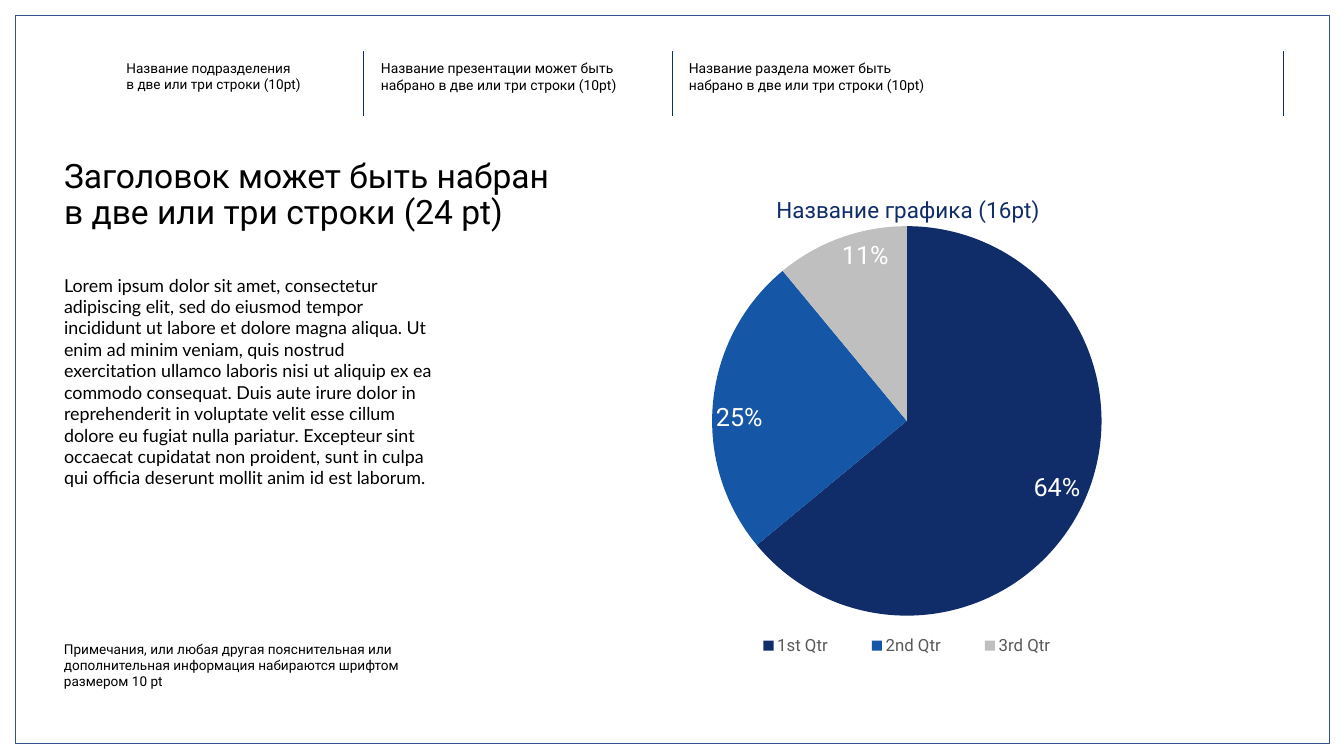
from lxml import etree
from pptx import Presentation
from pptx import util as u
from pptx.chart.data import CategoryChartData
from pptx.dml.color import RGBColor
from pptx.enum import chart as ch, shapes, text
from pptx.oxml.ns import qn

COLORS = {"navy": "102D69", "blue": "1656A6", "silver": "BFBFBF", "frame": "32538F",
          "white": "FFFFFF", "black": "000000", "gray": "595959"}
SLICES = [("1st Qtr", 64, "navy"), ("2nd Qtr", 25, "blue"), ("3rd Qtr", 11, "silver")]
HEADERS = [
    (2.41, 19.4, "Название подразделения\vв две или три строки (10pt)"),
    (7.46, 19.8, "Название презентации может быть набрано в две или три строки (10pt)"),
    (13.57, 19.8, "Название раздела может быть набрано в две или три строки (10pt)"),
]
BODY = ("Lorem ipsum dolor sit amet, consectetur adipiscing elit, sed do eiusmod tempor "
        "incididunt ut labore et dolore magna aliqua. Ut enim ad minim veniam, quis nostrud "
        "exercitation ullamco laboris nisi ut aliquip ex ea commodo consequat. Duis aute irure "
        "dolor in reprehenderit in voluptate velit esse cillum dolore eu fugiat nulla pariatur. "
        "Excepteur sint occaecat cupidatat non proident, sunt in culpa qui officia deserunt "
        "mollit anim id est laborum.")
NOTE = ("Примечания, или любая другая пояснительная или дополнительная информация "
        "набираются шрифтом размером 10 pt")


def rgb(name):
    return RGBColor.from_string(COLORS[name])


def set_font(font, size, color="black", name="Roboto"):
    font.size, font.name, font.bold = u.Pt(size), name, False
    font.color.rgb = rgb(color)


def write(sp, content, box, size, font="Roboto", spacing=1.0):
    """Place a text shape and fill it with one formatted paragraph."""
    sp.left, sp.top, sp.width, sp.height = map(u.Inches, box)
    tf = sp.text_frame
    tf.word_wrap = True
    tf.auto_size = text.MSO_AUTO_SIZE.NONE
    tf.vertical_anchor = text.MSO_ANCHOR.TOP
    tf.margin_left = tf.margin_right = tf.margin_top = tf.margin_bottom = u.Inches(0.1)
    p = tf.paragraphs[0]
    p.text = content
    p.alignment = text.PP_ALIGN.LEFT
    p.line_spacing, p.space_before = spacing, u.Pt(0)
    pPr = p._p.get_or_add_pPr()
    pPr.set("marL", "0")
    pPr.set("indent", "0")
    etree.SubElement(pPr, qn("a:buNone"))
    for r in p.runs:
        set_font(r.font, size, name=font)


def add_text(s, content, box, size):
    write(s.shapes.add_textbox(0, 0, 0, 0), content, box, size)


def add_frame(s):
    sp = s.shapes.add_shape(shapes.MSO_SHAPE.RECTANGLE,
                            *map(u.Inches, (0.29, 0.3, 26.09, 14.44)))
    sp.shadow.inherit = False
    sp.fill.solid()
    sp.fill.fore_color.rgb = rgb("white")
    sp.line.color.rgb = rgb("frame")
    sp.line.width = u.Pt(0.25)
    s.shapes._spTree.insert(2, sp._element)  # behind the placeholders


def add_divider(s, x):
    line = s.shapes.add_connector(shapes.MSO_CONNECTOR.STRAIGHT,
                                  *map(u.Inches, (x, 1.02, x, 2.3)))
    line.line.color.rgb = rgb("navy")
    line.line.width = u.Pt(0.75)
    etree.SubElement(line._element.spPr, qn("a:effectLst"))


def set_layout(part, **values):
    """Fix a chart part's place, in fractions of the chart."""
    for old in part.findall(qn("c:layout")):
        part.remove(old)
    layout = etree.Element(qn("c:layout"))
    overlay = part.find(qn("c:overlay"))
    if overlay is None:  # plot area
        part.insert(0, layout)
    else:  # title or legend
        overlay.set("val", "1")
        overlay.addprevious(layout)
    manual = etree.SubElement(layout, qn("c:manualLayout"))
    if overlay is None:
        etree.SubElement(manual, qn("c:layoutTarget")).set("val", "inner")
    for tag, val in {"xMode": "edge", "yMode": "edge", **values}.items():
        etree.SubElement(manual, qn(f"c:{tag}")).set("val", str(val))


def add_pie(s):
    data = CategoryChartData()
    data.categories = [name for name, _, _ in SLICES]
    data.add_series("Series 1", [value for _, value, _ in SLICES])
    chart = s.shapes.add_chart(ch.XL_CHART_TYPE.PIE,
                               *map(u.Inches, (14.07, 3.79, 7.85, 9.3)), data).chart
    set_font(chart.font, 10)

    # Title, clear of the pie
    chart.has_title = True
    r = chart.chart_title.text_frame.paragraphs[0].add_run()
    r.text = "Название графика (16pt)"
    set_font(r.font, 32, "navy")
    set_layout(chart.chart_title._element, x=0.16, y=0)

    # Legend
    chart.has_legend = True
    chart.legend.position = ch.XL_LEGEND_POSITION.BOTTOM
    chart.legend.include_in_layout = True
    set_font(chart.legend.font, 24, "gray")
    set_layout(chart.legend._element, x=0.04, y=0.94, w=0.92, h=0.06)

    # Slices and labels
    plot = chart.plots[0]
    plot.vary_by_categories = True
    for i, (_, _, color) in enumerate(SLICES):
        fill = plot.series[0].points[i].format.fill
        fill.solid()
        fill.fore_color.rgb = rgb(color)
    labels = plot.series[0].data_labels
    labels.show_percentage, labels.show_value = True, False
    labels.number_format, labels.number_format_is_linked = "0%", False
    labels.position = ch.XL_LABEL_POSITION.INSIDE_END
    set_font(labels.font, 36, "white")
    set_layout(chart._chartSpace.chart.plotArea, x=0.005, y=0.075, w=0.99, h=0.831)


def main():
    prs = Presentation()
    prs.slide_width, prs.slide_height = u.Inches(26.67), u.Inches(15)
    s = prs.slides.add_slide(prs.slide_layouts[1])

    # Frame and header
    add_frame(s)
    for x in (7.21, 13.34, 25.47):
        add_divider(s, x)
    for x, size, content in HEADERS:
        add_text(s, content, (x, 1.09, 4.93, 1.2), size)

    # Title, body and note
    write(s.shapes.title, "Заголовок может быть набран\vв две или три строки (24 pt)",
          (1.17, 3.06, 21.96, 1.73), 48, spacing=0.9)
    write(s.placeholders[1], BODY, (1.17, 5.34, 7.61, 5.06), 25.5, font="Lato")
    add_text(s, NOTE, (1.17, 12.61, 7.15, 1.2), 19.4)

    # Chart
    add_pie(s)
    prs.save("out.pptx")


if __name__ == "__main__":
    main()
